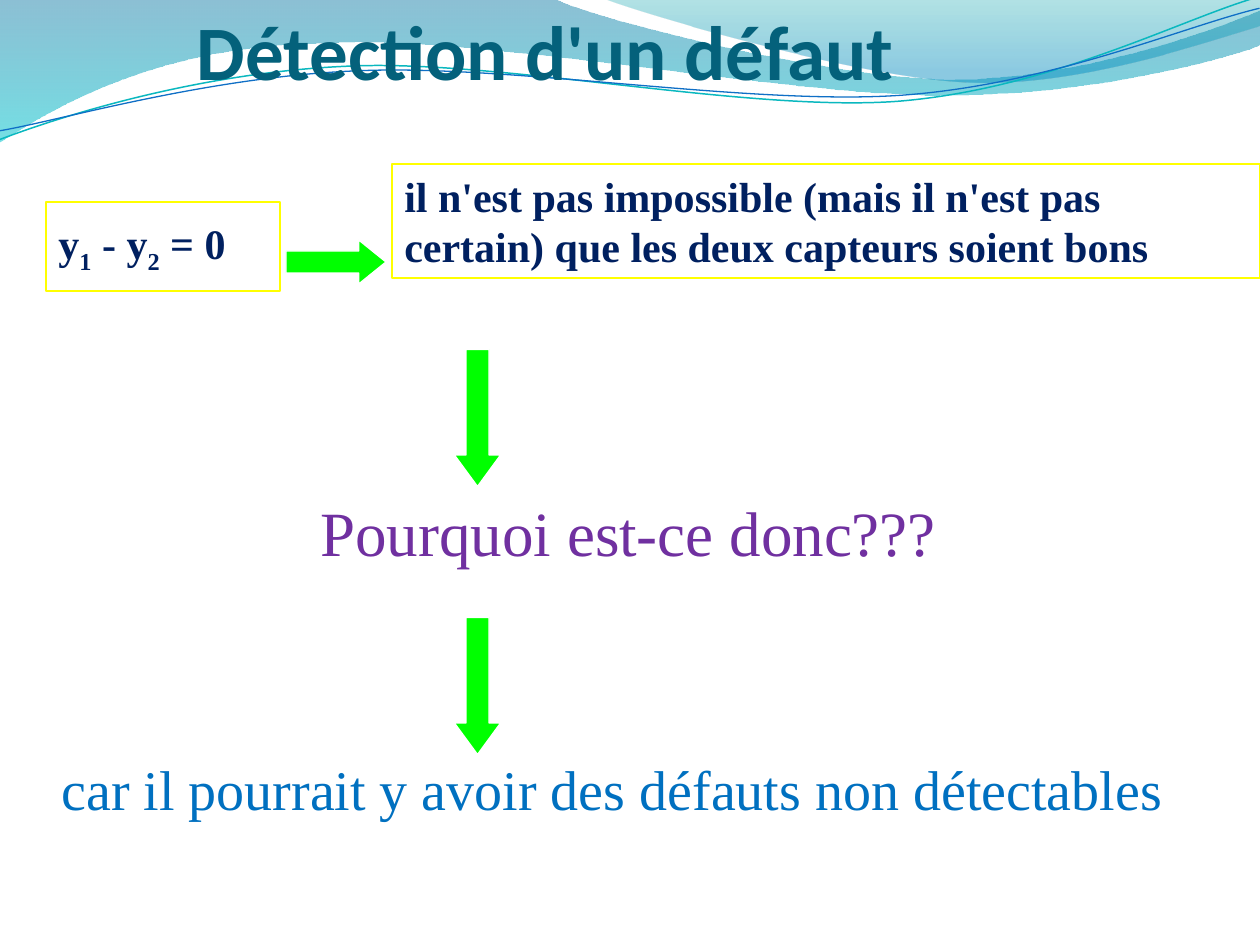
import pptx
import pptx.dml.color
import pptx.enum.shapes
import pptx.enum.text
import pptx.util
from lxml import etree
from pptx.oxml.ns import qn

RGBColor = pptx.dml.color.RGBColor
Shape = pptx.enum.shapes.MSO_SHAPE
Anchor = pptx.enum.text.MSO_ANCHOR

SCALE = 914400 / 126  # EMU per px
SERIF = "Times New Roman"
CURVE_TILT = 357.3

WHITE = RGBColor(0xFF, 0xFF, 0xFF)
YELLOW = RGBColor(0xFF, 0xFF, 0x00)
GREEN = RGBColor(0x00, 0xFF, 0x00)
NAVY = RGBColor(0x00, 0x20, 0x60)
PURPLE = RGBColor(0x70, 0x30, 0xA0)
BLUE = RGBColor(0x00, 0x70, 0xC0)
TITLE_TEAL = RGBColor(0x04, 0x61, 0x7B)
WAVE_BLUE = RGBColor(0x00, 0x74, 0xA1)
WAVE_CYAN = RGBColor(0x00, 0xC6, 0xCF)
CREST_TEAL = RGBColor(0x00, 0xA1, 0xA9)
CREST_BLUE = RGBColor(0x00, 0x8B, 0xBF)
LINE_CYAN = RGBColor(0x0A, 0xB8, 0xBF)
LINE_BLUE = RGBColor(0x0F, 0x6F, 0xC6)

# Each outline is a start point, then segments: one point is a line,
# three points are a cubic curve. The two thin curves are given untilted.
WAVE = [(0, 0), [(554, -1)],
        [(600, 21), (837, 79), (955, 79)], [(1075, 79), (1207, 33), (1260, 11)],
        [(1261, 45)],
        [(1238, 55), (1096, 96), (940, 95)], [(781, 95), (481, 35), (324, 43)],
        [(161, 45), (58, 105), (-1, 142)]]
CREST = [(604, -1), [(641, 14), (859, 78), (969, 82)],
         [(1079, 87), (1211, 40), (1260, 26)], [(1260, 0)]]
CYAN_CURVE = [(-3, 110), [(58, 90), (199, 52), (350, 53)],
              [(499, 53), (745, 118), (896, 114)],
              [(1049, 109), (1184, 45), (1260, 27)]]
BLUE_CURVE = [(-2, 101), [(57, 94), (207, 57), (357, 58)],
              [(509, 58), (750, 112), (902, 108)],
              [(1052, 104), (1187, 52), (1262, 38)]]


def emu(*lengths):
    return [round(length * SCALE) for length in lengths]


def add_outline(page, left, top, outline, closed):
    """Add a freeform whose three-point segments become cubic curves."""
    start, *segments = outline
    builder = page.shapes.build_freeform(*start, scale=SCALE)
    builder.add_line_segments([point for segment in segments for point in segment],
                              close=closed)
    shape = builder.convert_to_shape(*emu(left, top))
    shape.shadow.inherit = False
    lines = iter(list(shape._element.spPr.iter(qn("a:lnTo"))))
    for segment in segments:
        first, *others = [next(lines) for _ in segment]
        if others:
            first.tag = qn("a:cubicBezTo")
        for line in others:
            first.append(line[0])
            line.getparent().remove(line)
    return shape


def add_band(page, left, top, outline, stops):
    """Add a filled band; stops are (position, colour, opacity in percent)."""
    shape = add_outline(page, left, top, outline, True)
    shape.line.fill.background()
    shape.fill.gradient()
    shape.fill.gradient_angle = 270
    for stop, (position, colour, _) in zip(shape.fill.gradient_stops, stops):
        stop.position = position
        stop.color.rgb = colour
    colours = shape._element.spPr.iter(qn("a:srgbClr"))
    for element, (_, _, opacity) in zip(list(colours), stops):
        etree.SubElement(element, qn("a:alpha")).set("val", str(opacity * 1000))


def add_header_waves(page, left, top):
    add_band(page, left, top, WAVE, [(0, WAVE_BLUE, 45), (1, WAVE_CYAN, 55)])
    add_band(page, left, top, CREST, [(0, CREST_TEAL, 30), (0.8, CREST_BLUE, 45)])
    for outline, colour, width in ((CYAN_CURVE, LINE_CYAN, 0.85),
                                   (BLUE_CURVE, LINE_BLUE, 0.75)):
        shape = add_outline(page, left, top, outline, False)
        shape.rotation = CURVE_TILT
        shape.fill.background()
        shape.line.color.rgb = colour
        shape.line.width = pptx.util.Pt(width)


def paint(shape, fill, line=None, width=1):
    shape.shadow.inherit = False
    shape.fill.solid()
    shape.fill.fore_color.rgb = fill
    if line is None:
        shape.line.fill.background()
    else:
        shape.line.color.rgb = line
        shape.line.width = pptx.util.Pt(width)


def write(shape, pieces, size, colour, font=SERIF, bold=False, wrap=False,
          anchor=Anchor.TOP):
    """Fill a shape with one paragraph; pieces are (text, is subscript)."""
    frame = shape.text_frame
    frame.word_wrap = wrap
    frame.vertical_anchor = anchor
    para = frame.paragraphs[0]
    para.alignment = pptx.enum.text.PP_ALIGN.LEFT
    for text, subscript in pieces:
        span = para.add_run()
        span.text = text
        span.font.name = font
        span.font.size = pptx.util.Pt(size)
        span.font.bold = bold
        span.font.color.rgb = colour
        if subscript:
            span.font._element.set("baseline", "-25000")


def add_arrow(page, left, top, width, height, head, rotation=0):
    arrow = page.shapes.add_shape(Shape.RIGHT_ARROW, *emu(left, top, width, height))
    arrow.adjustments[0] = 0.5
    arrow.adjustments[1] = head
    arrow.rotation = rotation
    paint(arrow, GREEN, WHITE, 0.75)


def add_title(page, left, top, width, height):
    box = page.shapes.add_textbox(*emu(left, top, width, height))
    frame = box.text_frame
    frame.margin_left = frame.margin_right = frame.margin_bottom = 0
    write(box, [("Détection d'un défaut", False)], 44, TITLE_TEAL,
          font="Calibri", bold=True, wrap=True, anchor=Anchor.BOTTOM)


def add_implication(page, left, top):
    formula = page.shapes.add_shape(Shape.RECTANGLE, *emu(left, top + 38, 234, 89))
    paint(formula, WHITE, YELLOW)
    write(formula, [("y", False), ("1", True), (" - y", False), ("2", True),
                    (" = 0", False)], 24, NAVY, bold=True, anchor=Anchor.MIDDLE)
    conclusion = page.shapes.add_shape(Shape.RECTANGLE,
                                       *emu(left + 346, top, 868, 114))
    paint(conclusion, WHITE, YELLOW)
    write(conclusion, [("il n'est pas impossible (mais il n'est pas certain) "
                        "que les deux capteurs soient bons", False)],
          24, NAVY, bold=True, wrap=True)
    add_arrow(page, left + 240, top + 76, 100, 44, 0.618)


def add_explanation(page, left, top):
    question = page.shapes.add_textbox(*emu(left + 259, top + 92, 648, 90))
    write(question, [("Pourquoi est-ce donc???", False)], 36, PURPLE)
    answer = page.shapes.add_shape(Shape.RECTANGLE,
                                   *emu(left, top + 353, 1138, 81))
    paint(answer, WHITE)
    write(answer, [("car il pourrait y avoir des défauts non détectables", False)],
          32, BLUE)
    for offset in (268, 0):
        add_arrow(page, left + 360, top + offset, 137, 46, 0.682, rotation=90)


def main():
    deck = pptx.Presentation()
    deck.slide_width, deck.slide_height = emu(1260, 945)
    page = deck.slides.add_slide(deck.slide_layouts[6])
    add_header_waves(page, 0, 0)
    add_implication(page, 46, 164)
    add_explanation(page, 49, 395)
    add_title(page, 197, 20, 728, 76)
    deck.save("out.pptx")


if __name__ == "__main__":
    main()
